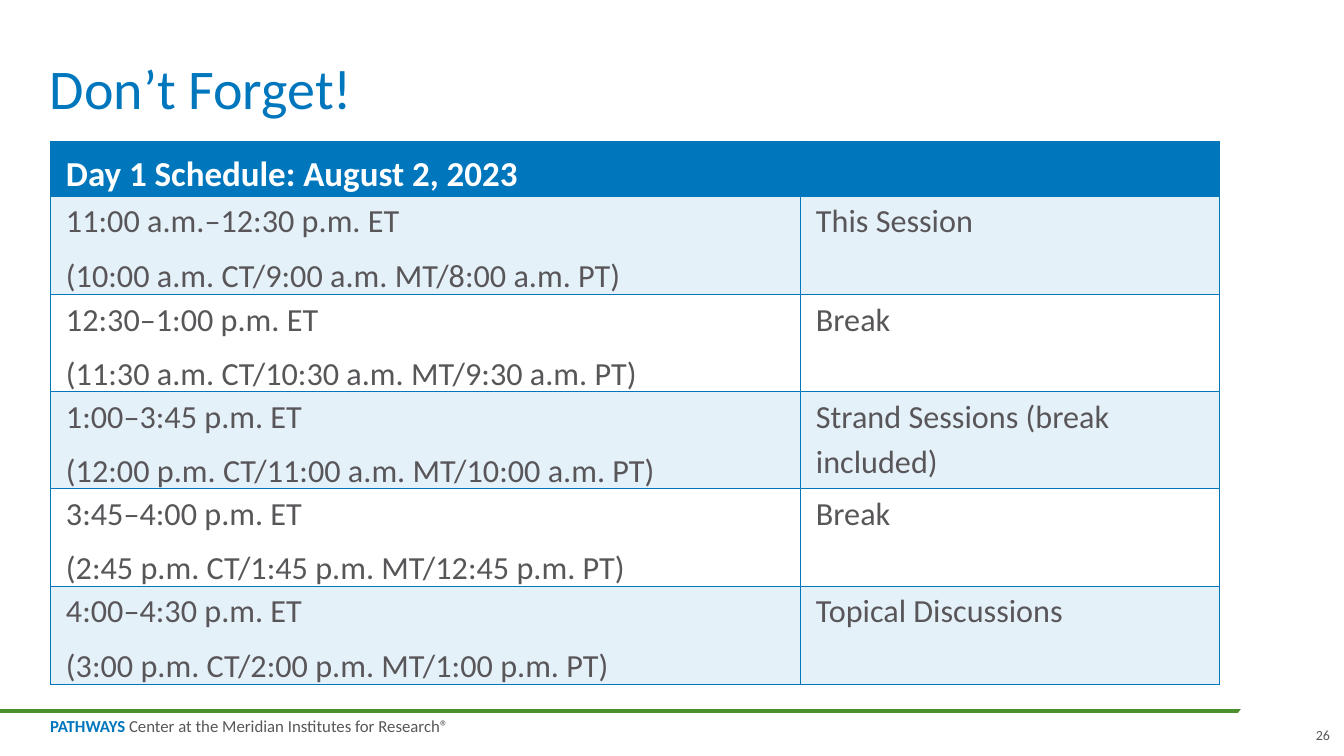
from lxml.etree import SubElement
from pptx import Presentation
from pptx.dml.color import RGBColor
from pptx.enum.shapes import MSO_CONNECTOR, MSO_SHAPE
from pptx.enum.text import MSO_ANCHOR, PP_ALIGN
from pptx.oxml.ns import qn
from pptx.util import Emu, Pt

BLUE, GREY, GREEN, PALE, WHITE = "0076BD", "59565A", "4C902D", "E5F1F8", "FFFFFF"
TITLE = "Don’t Forget!"
HEADING = "Day 1 Schedule: August 2, 2023"
# Eastern time, other time zones, activity, space before and after (pt)
SCHEDULE = [
    ("11:00 a.m.–12:30 p.m. ET", "(10:00 a.m. CT/9:00 a.m. MT/8:00 a.m. PT)", "This Session", 4, 3),
    ("12:30–1:00 p.m. ET", "(11:30 a.m. CT/10:30 a.m. MT/9:30 a.m. PT)", "Break", 3, 3),
    ("1:00–3:45 p.m. ET", "(12:00 p.m. CT/11:00 a.m. MT/10:00 a.m. PT)",
     "Strand Sessions (break included)", 3, 3),
    ("3:45–4:00 p.m. ET", "(2:45 p.m. CT/1:45 p.m. MT/12:45 p.m. PT)", "Break", 3, 3),
    ("4:00–4:30 p.m. ET", "(3:00 p.m. CT/2:00 p.m. MT/1:00 p.m. PT)", "Topical Discussions", 3, 4),
]
FOOTER = [("PATHWAYS", BLUE, True), (" Center at the Meridian Institutes for Research®", GREY, False)]
PAGE = "26"

LEFT, TABLE_TOP = 50, 141
COLUMNS = (750, 420)
HEADER_H, ROW_H = 55, 96
CELL_MARGIN = 16


def px(n):
    return Emu(round(n * 914400 / 100.8))


def rgb(color):
    return RGBColor.from_string(color)


def set_all(obj, **values):
    for name, value in values.items():
        setattr(obj, name, value)


def add_run(p, text, size, color, bold=False):
    r = p.add_run()
    r.text = text
    set_all(r.font, name="Calibri", size=Pt(size), bold=bold)
    r.font.color.rgb = rgb(color)


def add_box(s, box, wrap, anchor=MSO_ANCHOR.TOP):
    """Add a text box without margins and return its first paragraph."""
    tf = s.shapes.add_textbox(*map(px, box)).text_frame
    set_all(tf, word_wrap=wrap, vertical_anchor=anchor,
            margin_left=0, margin_top=0, margin_right=0, margin_bottom=0)
    return tf.paragraphs[0]


def format_cell(cell, fill, anchor=MSO_ANCHOR.TOP):
    """Set margins, thin blue borders and fill; borders come first in the XML."""
    set_all(cell, margin_left=px(CELL_MARGIN), margin_right=px(CELL_MARGIN),
            margin_top=0, margin_bottom=0, vertical_anchor=anchor)
    tcPr = cell._tc.get_or_add_tcPr()
    for side in ("lnL", "lnR", "lnT", "lnB"):
        ln = SubElement(tcPr, qn(f"a:{side}"), w=str(Pt(0.75)))
        SubElement(SubElement(ln, qn("a:solidFill")), qn("a:srgbClr"), val=BLUE)
    cell.fill.solid()
    cell.fill.fore_color.rgb = rgb(fill)


def write_cell(cell, lines, size, color, before=0, after=0, bold=False):
    tf = cell.text_frame
    for i, line in enumerate(lines):
        p = tf.add_paragraph() if i else tf.paragraphs[0]
        set_all(p, line_spacing=1.15, space_before=Pt(before if i else 0), space_after=Pt(after))
        add_run(p, line, size, color, bold)


def add_schedule(s):
    rows = len(SCHEDULE) + 1
    height = HEADER_H + ROW_H * len(SCHEDULE)
    table = s.shapes.add_table(rows, len(COLUMNS), px(LEFT), px(TABLE_TOP),
                               px(sum(COLUMNS)), px(height)).table
    for column, width in zip(table.columns, COLUMNS):
        column.width = px(width)
    for i, row in enumerate(table.rows):
        row.height = px(ROW_H if i else HEADER_H)
    for cell in table.rows[0].cells:
        format_cell(cell, BLUE, MSO_ANCHOR.BOTTOM)
    write_cell(table.cell(0, 0), [HEADING], 25, WHITE, after=6, bold=True)
    for i, (eastern, zones, activity, before, after) in enumerate(SCHEDULE, 1):
        for j, lines in enumerate(([eastern, zones], [activity])):
            cell = table.cell(i, j)
            format_cell(cell, PALE if i % 2 else WHITE)
            write_cell(cell, lines, 23, GREY, before, after)


def add_footer(s):
    rule = s.shapes.add_connector(MSO_CONNECTOR.STRAIGHT, px(0), px(711), px(1310), px(711))
    rule.line.color.rgb = rgb(GREEN)
    rule.line.width = Pt(3)
    SubElement(rule._element.spPr, qn("a:effectLst"))

    p = add_box(s, (LEFT, 719, 405, 17), wrap=False)
    p.line_spacing = 0.85
    for text, color, bold in FOOTER:
        add_run(p, text, 12, color, bold)

    rule_end = s.shapes.add_shape(MSO_SHAPE.OVAL, *map(px, (1226, 682, 118, 58)))
    rule_end.rotation = 332.1
    rule_end.shadow.inherit = False
    rule_end.fill.solid()
    rule_end.fill.fore_color.rgb = rgb(WHITE)
    rule_end.line.fill.background()

    p = add_box(s, (1313, 726, 17, 17), wrap=False, anchor=MSO_ANCHOR.BOTTOM)
    p.alignment = PP_ALIGN.RIGHT
    add_run(p, PAGE, 10, GREY)


def main():
    prs = Presentation()
    set_all(prs, slide_width=px(1344), slide_height=px(756))
    s = prs.slides.add_slide(prs.slide_layouts[6])
    add_footer(s)
    p = add_box(s, (LEFT, 0, 1250, 122), wrap=True, anchor=MSO_ANCHOR.BOTTOM)
    p.line_spacing = 0.9
    add_run(p, TITLE, 40, BLUE)
    add_schedule(s)
    prs.save("out.pptx")


if __name__ == "__main__":
    main()
